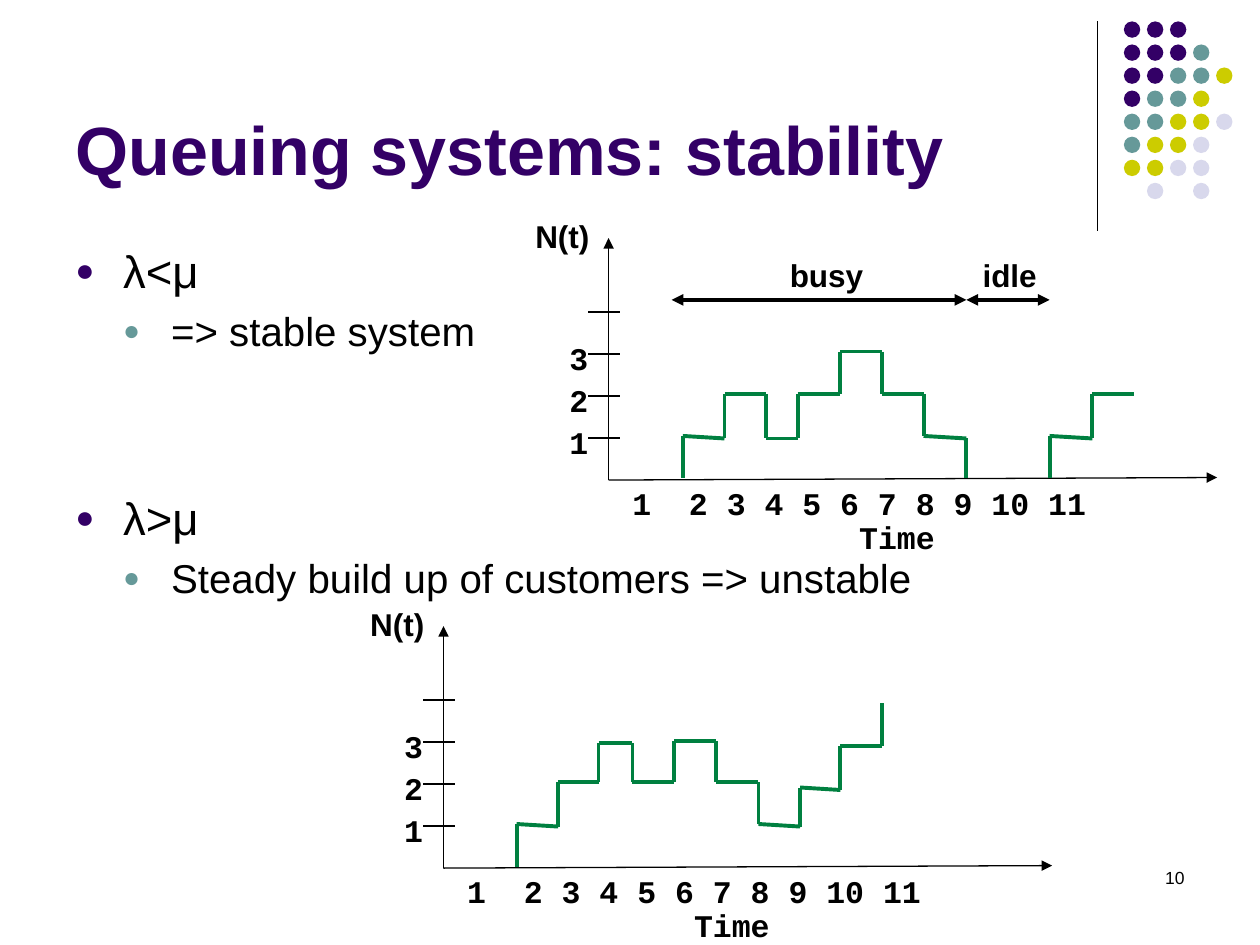
"""Build the slide on the stability of queuing systems."""
from itertools import pairwise

from pptx import Presentation
from pptx.dml.color import RGBColor
from pptx.enum.shapes import MSO_CONNECTOR, MSO_SHAPE
from pptx.enum.text import MSO_ANCHOR, MSO_AUTO_SIZE, PP_ALIGN
from pptx.oxml.ns import qn
from pptx.util import Inches, Pt
from lxml.etree import SubElement

BLACK = RGBColor(0x00, 0x00, 0x00)
PURPLE = RGBColor(0x33, 0x00, 0x66)
TEAL = RGBColor(0x66, 0x99, 0x99)
LIME = RGBColor(0xCC, 0xCC, 0x00)
LAVENDER = RGBColor(0xD8, 0xD8, 0xEC)
GREEN = RGBColor(0x00, 0x80, 0x40)

DOT_COLORS = {"P": PURPLE, "T": TEAL, "L": LIME, "V": LAVENDER}
DOT_ROWS = ["PPP", "PPPT", "PPTTL", "PTTL", "TTLLV", "TLLV", "LLVV", ".V.V"]

STABLE_BUSY = [
    (5.42, 3.79), (5.42, 3.46), (5.75, 3.48), (5.75, 3.13), (6.08, 3.13),
    (6.08, 3.48), (6.33, 3.48), (6.33, 3.13), (6.67, 3.13), (6.67, 2.79),
    (7, 2.79), (7, 3.13), (7.33, 3.13), (7.33, 3.46), (7.67, 3.48), (7.67, 3.79),
]
STABLE_RESTART = [(8.33, 3.79), (8.33, 3.46), (8.67, 3.48), (8.67, 3.13), (9, 3.13)]
UNSTABLE = [
    (4.1, 6.88), (4.1, 6.54), (4.43, 6.56), (4.43, 6.21), (4.75, 6.21),
    (4.75, 5.9), (5.02, 5.9), (5.02, 6.21), (5.35, 6.21), (5.35, 5.88),
    (5.68, 5.88), (5.68, 6.21), (6.02, 6.21), (6.02, 6.54), (6.35, 6.56),
    (6.35, 6.25), (6.67, 6.27), (6.67, 5.92), (7, 5.92), (7, 5.58),
]


def write(paragraph, text, *, size=18, font="Arial", color=BLACK, bold=False, align=None):
    run = paragraph.add_run()
    run.text = text
    run.font.size = Pt(size)
    run.font.name = font
    run.font.color.rgb = color
    run.font.bold = bold
    paragraph.alignment = align


class QueueSlide:
    def __init__(self, slide):
        self.slide = slide
        self.mono = {"font": "Courier New", "bold": True}

    def frame(self, left, top, width, height, wrap=True):
        box = self.slide.shapes.add_textbox(
            Inches(left), Inches(top), Inches(width), Inches(height))
        box.text_frame.word_wrap = wrap
        return box.text_frame

    def label(self, left, top, width, text, **style):
        frame = self.frame(left, top, width, 0.4, wrap=False)
        frame.auto_size = MSO_AUTO_SIZE.SHAPE_TO_FIT_TEXT
        write(frame.paragraphs[0], text, **style)

    def line(self, start, end, color=BLACK, width=0.75, arrows=()):
        connector = self.slide.shapes.add_connector(
            MSO_CONNECTOR.STRAIGHT, *(Inches(value) for value in (*start, *end)))
        connector.line.color.rgb = color
        connector.line.width = Pt(width)
        properties = connector.line._get_or_add_ln()
        for arrow in arrows:
            SubElement(properties, qn(f"a:{arrow}"), type="triangle")
        SubElement(connector._element.spPr, qn("a:effectLst"))

    def steps(self, corners):
        for start, end in pairwise(corners):
            self.line(start, end, GREEN, 2.25)

    def dot(self, left, top, color):
        circle = self.slide.shapes.add_shape(
            MSO_SHAPE.OVAL, Inches(left), Inches(top), Inches(0.13), Inches(0.13))
        circle.shadow.inherit = False
        circle.fill.solid()
        circle.fill.fore_color.rgb = color
        circle.line.fill.background()

    def bullet(self, paragraph, text, level, before):
        size, color = ((26, PURPLE), (23, TEAL))[level]
        write(paragraph, text, size=size)
        paragraph.level = level
        paragraph.space_before = Pt(before)
        properties = paragraph._p.get_or_add_pPr()
        properties.set("marL", str(Inches(0.38 * (level + 1))))
        properties.set("indent", str(Inches(-0.38)))
        bullet_color = SubElement(properties, qn("a:buClr"))
        SubElement(bullet_color, qn("a:srgbClr"), val=str(color))
        SubElement(properties, qn("a:buSzPct"), val="70000")
        SubElement(properties, qn("a:buFont"), typeface="Arial")
        SubElement(properties, qn("a:buChar"), char="●")

    def axes(self, x, y):
        self.line((x, y), (x + 4.83, y - 0.02), arrows=["tailEnd"])
        self.line((x, y), (x, y - 1.92), arrows=["tailEnd"])
        for count in range(1, 5):
            level = y - count / 3
            for left in (x - 0.16, x - 0.08):
                self.line((left, level), (left + 0.17, level))
            if count < 4:
                self.label(x - 0.41, level - 0.17, 0.35, str(count), **self.mono)
        self.label(x + 0.09, y - 0.02, 3.93, "1  2 3 4 5 6 7 8 9 10 11", **self.mono)
        self.label(x + 1.89, y + 0.25, 0.95, "Time", **self.mono)
        self.label(x - 0.68, y - 2.14, 0.63, "N(t)", bold=True)

    def period(self, start, end, text, left, width):
        self.line((start, 2.38), (end, 2.38), width=2.25, arrows=["headEnd", "tailEnd"])
        self.label(left, 1.98, width, text, bold=True)


def main():
    deck = Presentation()
    deck.slide_width, deck.slide_height = Inches(10), Inches(7.5)
    page = QueueSlide(deck.slides.add_slide(deck.slide_layouts[6]))

    page.line((8.71, 0.17), (8.71, 1.83))
    for row, colors in enumerate(DOT_ROWS):
        for column, key in enumerate(colors):
            if key in DOT_COLORS:
                page.dot(8.92 + 0.183 * column, 0.17 + 0.183 * row, DOT_COLORS[key])

    number = page.frame(7.17, 6.83, 2.33, 0.5)
    write(number.paragraphs[0], "10", size=10, align=PP_ALIGN.RIGHT)
    title = page.frame(0.5, 0.13, 8.25, 1.42)
    title.vertical_anchor = MSO_ANCHOR.BOTTOM
    write(title.paragraphs[0], "Queuing systems: stability", size=39, color=PURPLE, bold=True)

    body = page.frame(0.5, 1.88, 9, 4.82)
    points = [
        ("λ<μ", 0, 5.2),
        ("=> stable system", 1, 5),
        ("λ>μ", 0, 77.5),
        ("Steady build up of customers => unstable", 1, 5),
    ]
    for index, (text, level, before) in enumerate(points):
        paragraph = body.add_paragraph() if index else body.paragraphs[0]
        page.bullet(paragraph, text, level, before)

    page.axes(4.83, 3.81)
    page.steps(STABLE_BUSY)
    page.steps(STABLE_RESTART)
    page.period(5.33, 7.67, "busy", 6.17, 0.8)
    page.period(7.67, 8.33, "idle", 7.7, 0.64)
    page.axes(3.52, 6.89)
    page.steps(UNSTABLE)

    deck.save("out.pptx")


if __name__ == "__main__":
    main()
